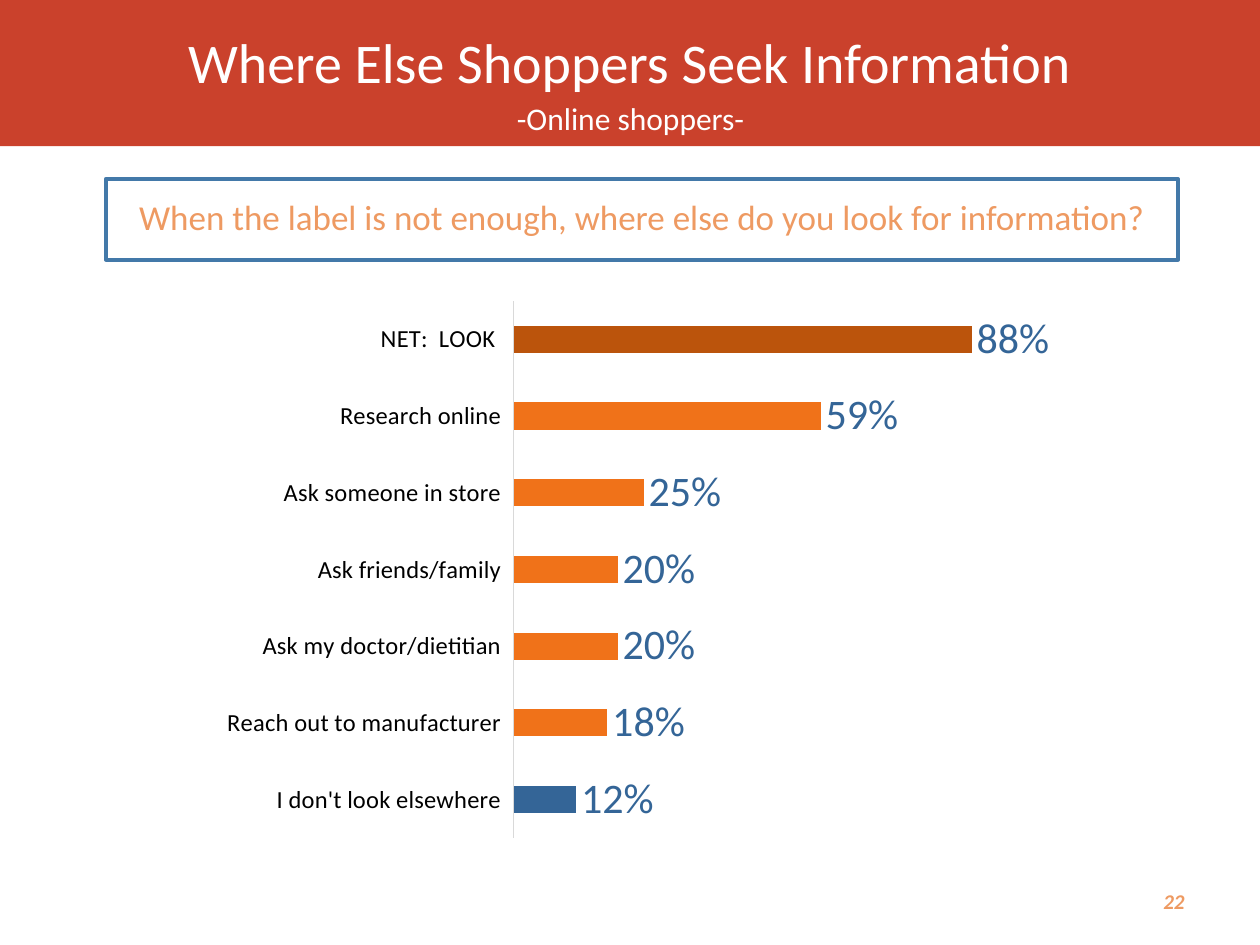
from dataclasses import dataclass
from typing import Optional

from pptx import Presentation
from pptx.chart.data import CategoryChartData
from pptx.dml.color import RGBColor
from pptx.enum.chart import XL_CHART_TYPE, XL_LABEL_POSITION, XL_TICK_LABEL_POSITION, XL_TICK_MARK
from pptx.enum.shapes import MSO_SHAPE
from pptx.enum.text import MSO_ANCHOR, MSO_AUTO_SIZE, PP_ALIGN
from pptx.util import Inches, Pt

FONT = "Calibri"
COLORS = {
    "white": "FFFFFF",
    "black": "000000",
    "banner": "CA412C",
    "accent": "EE9A62",
    "frame": "4379A9",
    "axis": "D9D9D9",
    "blue": "346597",
    "orange": "F07219",
    "brown": "BB540C",
}


@dataclass
class TextItem:
    text: str
    box: tuple[float, float, float, float]
    size: int
    color: str
    align: PP_ALIGN = PP_ALIGN.CENTER
    anchor: MSO_ANCHOR = MSO_ANCHOR.MIDDLE
    spacing: Optional[object] = None
    emphasis: bool = False
    wrap: bool = True


@dataclass
class Answer:
    label: str
    share: float
    color: str = "orange"


TITLE = TextItem("When the label is not enough, where else do you look for information?",
                 (0.84, 1.42, 8.51, 0.64), 20, "accent", spacing=0.9)
LABELS = [
    TextItem("Where Else Shoppers Seek Information", (0, 0.04, 10, 0.92), 32, "white",
             spacing=Pt(36)),
    TextItem("-Online shoppers-", (3.99, 0.74, 2.03, 0.4), 18, "white",
             anchor=MSO_ANCHOR.TOP, wrap=False),
    TextItem("22", (7.17, 6.95, 2.33, 0.4), 12, "accent", PP_ALIGN.RIGHT, emphasis=True),
]
ANSWERS = [
    Answer("I don't look elsewhere", 0.12, "blue"),
    Answer("Reach out to manufacturer", 0.18),
    Answer("Ask my doctor/dietitian", 0.20),
    Answer("Ask friends/family", 0.20),
    Answer("Ask someone in store", 0.25),
    Answer("Research online", 0.59),
    Answer("NET:  LOOK ", 0.88, "brown"),
]


def rgb(name: str) -> RGBColor:
    return RGBColor.from_string(COLORS[name])


def style_font(font, size: int, color: str) -> None:
    font.name = FONT
    font.size = Pt(size)
    font.color.rgb = rgb(color)


def fill_solid(shape, color: str) -> None:
    shape.fill.solid()
    shape.fill.fore_color.rgb = rgb(color)


def write_text(shape, item: TextItem) -> None:
    frame = shape.text_frame
    frame.word_wrap = item.wrap
    frame.auto_size = MSO_AUTO_SIZE.NONE if item.wrap else MSO_AUTO_SIZE.SHAPE_TO_FIT_TEXT
    frame.vertical_anchor = item.anchor
    paragraph = frame.paragraphs[0]
    paragraph.alignment = item.align
    paragraph.space_before = Pt(0)
    if item.spacing is not None:
        paragraph.line_spacing = item.spacing
    run = paragraph.add_run()
    run.text = item.text
    style_font(run.font, item.size, item.color)
    if item.emphasis:
        run.font.bold = True
        run.font.italic = True


def add_banner(slide) -> None:
    banner = slide.shapes.add_shape(MSO_SHAPE.RECTANGLE, 0, 0, Inches(10), Inches(1.16))
    banner.shadow.inherit = False
    fill_solid(banner, "banner")
    banner.line.fill.background()


def add_question(slide) -> None:
    title = slide.shapes.title
    title.left, title.top, title.width, title.height = map(Inches, TITLE.box)
    fill_solid(title, "white")
    title.line.color.rgb = rgb("frame")
    title.line.width = Pt(2.25)
    write_text(title, TITLE)


def add_answer_chart(slide) -> None:
    data = CategoryChartData(number_format="0%")
    data.categories = [answer.label for answer in ANSWERS]
    data.add_series("Series 1", [answer.share for answer in ANSWERS])
    chart = slide.shapes.add_chart(XL_CHART_TYPE.BAR_CLUSTERED, Inches(1.67), Inches(2.3),
                                   Inches(6.67), Inches(4.44), data).chart
    style_font(chart.font, 10, "black")
    chart.has_legend = False
    chart.has_title = False

    category_axis = chart.category_axis
    category_axis.major_tick_mark = XL_TICK_MARK.NONE
    category_axis.tick_label_position = XL_TICK_LABEL_POSITION.LOW
    category_axis.format.line.color.rgb = rgb("axis")
    category_axis.format.line.width = Pt(0.75)
    style_font(category_axis.tick_labels.font, 14, "black")

    value_axis = chart.value_axis
    value_axis.minimum_scale = 0
    value_axis.maximum_scale = 1
    value_axis.has_major_gridlines = False
    value_axis.visible = False

    plot = chart.plots[0]
    plot.gap_width = 182
    plot.vary_by_categories = False
    series = plot.series[0]
    fill_solid(series.format, "blue")
    for index, answer in enumerate(ANSWERS):
        if answer.color != "blue":
            fill_solid(series.points[index].format, answer.color)

    labels = series.data_labels
    labels.show_value = True
    labels.number_format = "0%"
    labels.number_format_is_linked = False
    labels.position = XL_LABEL_POSITION.OUTSIDE_END
    style_font(labels.font, 24, "blue")


def main() -> None:
    presentation = Presentation()
    presentation.slide_width = Inches(10)
    presentation.slide_height = Inches(7.5)
    slide = presentation.slides.add_slide(presentation.slide_layouts[5])
    add_banner(slide)
    add_question(slide)
    for item in LABELS:
        write_text(slide.shapes.add_textbox(*map(Inches, item.box)), item)
    add_answer_chart(slide)
    presentation.save("out.pptx")


if __name__ == "__main__":
    main()
